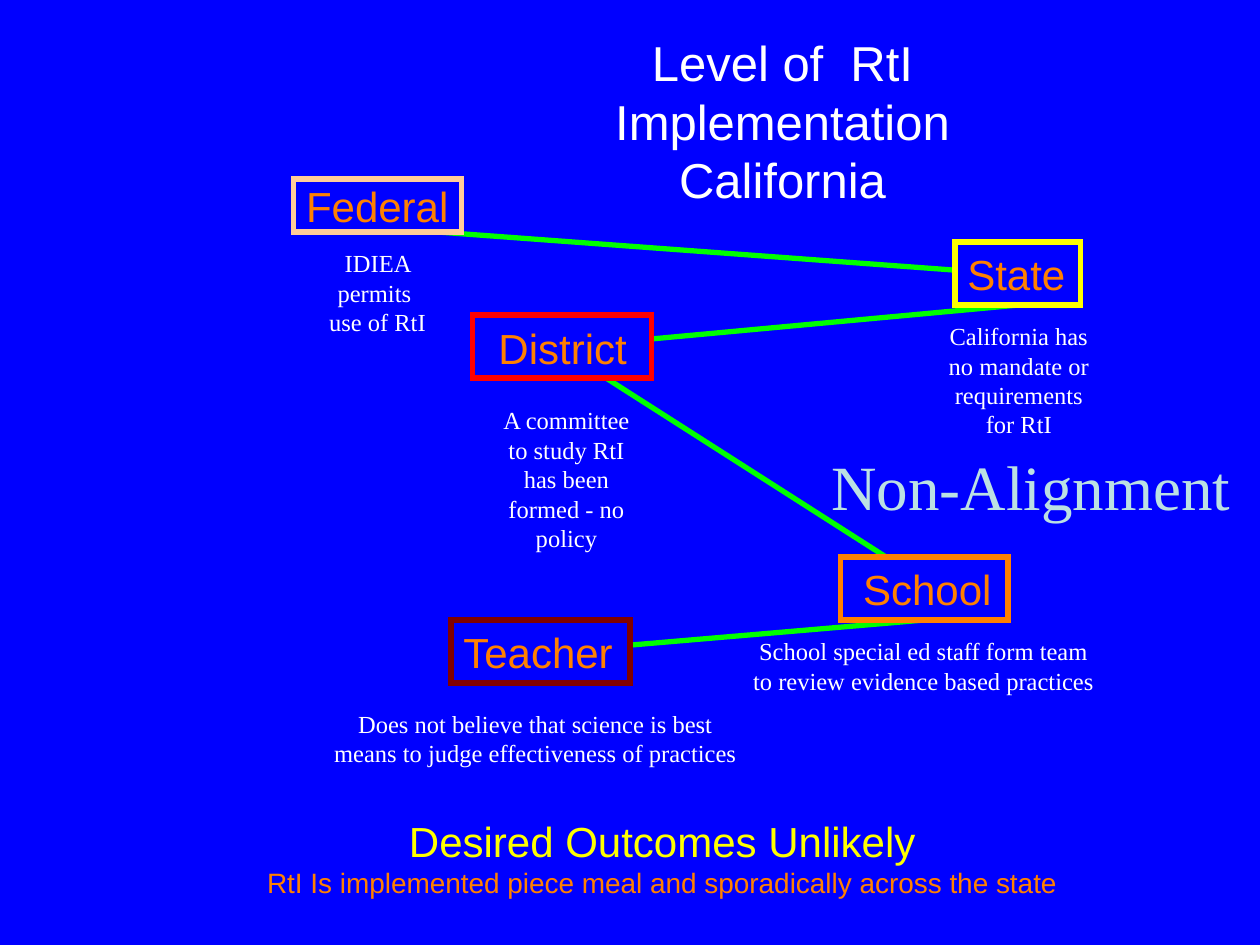
import pptx
import pptx.dml.color
import pptx.enum.shapes
import pptx.enum.text
import pptx.oxml
import pptx.oxml.ns
import pptx.util

Cm = pptx.util.Cm
Pt = pptx.util.Pt
ALIGN = pptx.enum.text.PP_ALIGN

COLOURS = {
    "blue": "0000FF", "green": "00FF00", "yellow": "FFFF00",
    "maroon": "800000", "orange": "FF8000", "red": "FF0000",
    "peach": "FFCC99", "pale": "BBE0E3", "white": "FFFFFF",
}

FORMATS = {
    "title": {"name": "Arial", "size": Pt(28), "colour": "white"},
    "level": {"name": "Arial", "size": Pt(24), "colour": "orange"},
    "note": {"name": "Times New Roman", "size": Pt(14), "colour": "white"},
    "verdict": {"name": "Times New Roman", "size": Pt(36), "colour": "pale"},
    "outcome": {"name": "Arial", "size": Pt(24), "colour": "yellow"},
    "detail": {"name": "Arial", "size": Pt(16), "colour": "orange"},
}

# Links between levels: start x, start y, end x, end y in cm
LINKS = [
    (18.62, 12.5, 11.23, 13.13),
    (11.23, 6.99, 18.85, 11.86),
    (20.52, 6.15, 11.43, 6.99),
    (8.46, 4.65, 20.12, 5.51),
]

# Levels: name, outline colour, frame and label as left, top, width, height
LEVELS = [
    ("State", "yellow", (19.25, 4.88, 2.54, 1.27), (19.25, 4.88, 2.49, 1.27)),
    ("Teacher", "maroon", (9.09, 12.5, 3.61, 1.27), (9.09, 12.5, 3.61, 1.27)),
    ("School", "orange", (16.94, 11.23, 3.38, 1.27), (17.15, 11.23, 3.1, 1.27)),
    ("District", "red", (9.53, 6.35, 3.61, 1.27), (9.8, 6.38, 3.1, 1.27)),
    ("Federal", "peach", (5.92, 3.61, 3.38, 1.07), (5.92, 3.51, 3.38, 1.27)),
]

# Notes under the levels
NOTES = [
    ((5.92, 4.88, 3.38, 2.03), ["IDIEA permits ", "use of RtI"]),
    ((18.85, 6.35, 3.38, 2.62),
     ["California has no mandate or requirements for RtI"]),
    ((9.73, 8.05, 3.38, 3.2),
     ["A committee to study RtI has been formed - no policy"]),
    ((14.81, 12.7, 7.62, 1.45),
     ["School special ed staff form team to review evidence based practices"]),
    ((6.35, 14.17, 8.89, 1.45),
     ["Does not believe that science is best means to judge effectiveness "
      "of practices"]),
]


def colour(name):
    return pptx.dml.color.RGBColor.from_string(COLOURS[name])


def drawing_element(tag, attributes=""):
    return pptx.oxml.parse_xml(
        f'<a:{tag} {pptx.oxml.ns.nsdecls("a")} {attributes}/>')


def format_span(span, style):
    for key, value in FORMATS[style].items():
        if key == "colour":
            span.font.color.rgb = colour(value)
        else:
            setattr(span.font, key, value)


def add_text(page, place, lines, align=ALIGN.CENTER,
             anchor=pptx.enum.text.MSO_ANCHOR.TOP):
    """Add a text box; lines holds one (text, style) pair per paragraph."""
    box = page.shapes.add_textbox(*map(Cm, place))
    frame = box.text_frame
    frame.word_wrap = True
    frame.vertical_anchor = anchor
    for index, (text, style) in enumerate(lines):
        para = frame.add_paragraph() if index else frame.paragraphs[0]
        para.alignment = align
        for number, part in enumerate(text.split("\n")):
            if number:
                para.add_line_break()
            span = para.add_run()
            span.text = part
            format_span(span, style)


def add_frame(page, place, outline):
    shape = page.shapes.add_shape(
        pptx.enum.shapes.MSO_SHAPE.RECTANGLE, *map(Cm, place))
    shape.shadow.inherit = False
    shape.fill.solid()
    shape.fill.fore_color.rgb = colour("blue")
    shape.line.color.rgb = colour(outline)
    shape.line.width = Pt(3)
    # Square corners
    shape.line._get_or_add_ln().append(
        drawing_element("miter", 'lim="800000"'))


def add_arrow(page, ends):
    arrow = page.shapes.add_connector(
        pptx.enum.shapes.MSO_CONNECTOR.STRAIGHT, *map(Cm, ends))
    arrow.line.color.rgb = colour("green")
    arrow.line.width = Pt(3)
    arrow.line._get_or_add_ln().append(
        drawing_element("tailEnd", 'type="triangle"'))
    arrow._element.spPr.append(drawing_element("effectLst"))


def main():
    deck = pptx.Presentation()
    deck.slide_width, deck.slide_height = Cm(25.4), Cm(19.05)
    page = deck.slides.add_slide(deck.slide_layouts[6])
    page.background.fill.solid()
    page.background.fill.fore_color.rgb = colour("blue")

    # Zigzag of levels, with the arrows behind the frames
    for ends in LINKS:
        add_arrow(page, ends)
    for name, outline, frame_place, label_place in LEVELS:
        add_frame(page, frame_place, outline)
        add_text(page, label_place, [(name, "level")], ALIGN.LEFT)

    # Outcome and verdict
    add_text(page, (3.61, 16.31, 19.48, 1.96), [
        ("Desired Outcomes Unlikely", "outcome"),
        ("RtI Is implemented piece meal and sporadically across the state",
         "detail"),
    ])
    add_text(page, (16.51, 8.89, 8.56, 1.78),
             [("Non-Alignment", "verdict")], ALIGN.LEFT)

    # Notes
    for place, texts in NOTES:
        add_text(page, place, [(text, "note") for text in texts])

    # Title
    add_text(page, (11.23, 0.84, 9.09, 3.18),
             [("Level of  RtI\nImplementation\nCalifornia", "title")],
             anchor=pptx.enum.text.MSO_ANCHOR.MIDDLE)

    deck.save("out.pptx")


if __name__ == "__main__":
    main()
